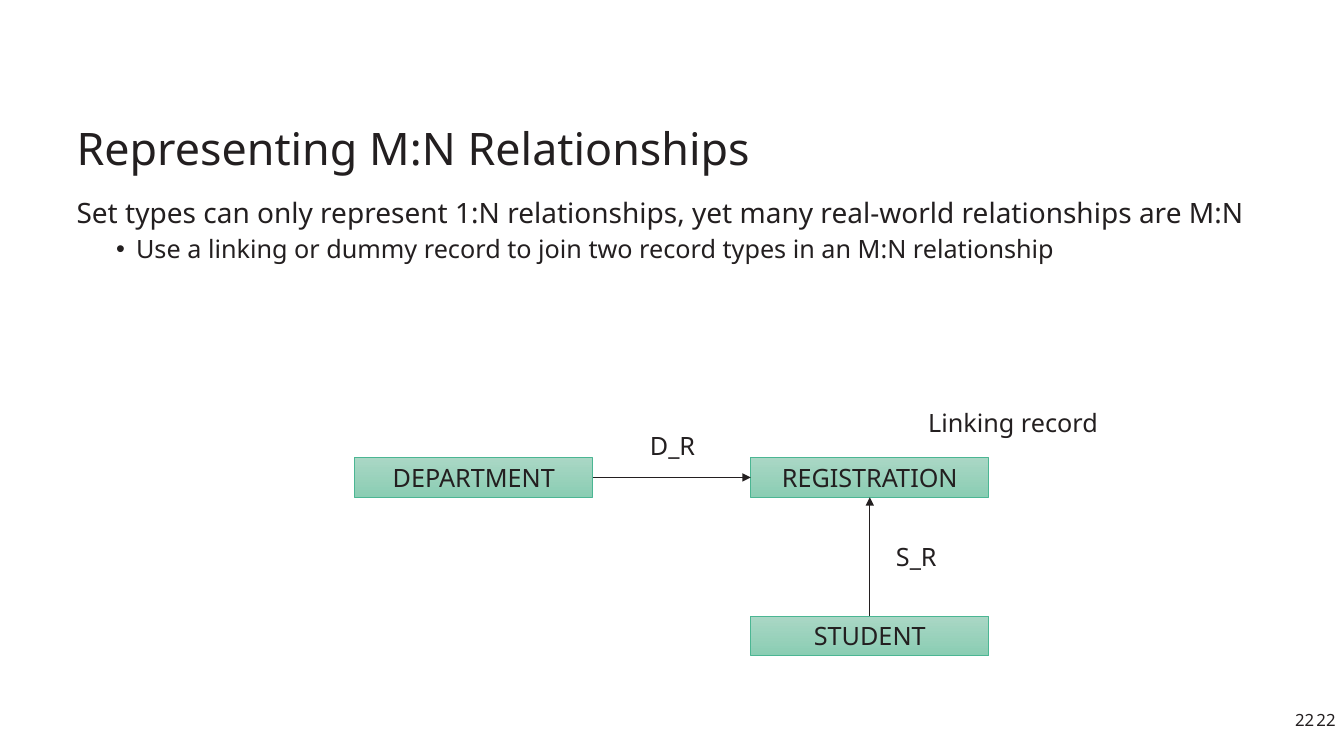
from dataclasses import dataclass

from lxml import etree
from pptx import Presentation
from pptx.dml.color import RGBColor
from pptx.enum.shapes import MSO_CONNECTOR, MSO_SHAPE
from pptx.enum.text import MSO_ANCHOR, MSO_AUTO_SIZE, PP_ALIGN
from pptx.oxml.ns import qn
from pptx.util import Cm, Pt

STRAIGHT = MSO_CONNECTOR.STRAIGHT
RECTANGLE = MSO_SHAPE.RECTANGLE
TOP, MIDDLE, BOTTOM = MSO_ANCHOR.TOP, MSO_ANCHOR.MIDDLE, MSO_ANCHOR.BOTTOM
LEFT, CENTER, RIGHT = PP_ALIGN.LEFT, PP_ALIGN.CENTER, PP_ALIGN.RIGHT
FIT_SHAPE = MSO_AUTO_SIZE.SHAPE_TO_FIT_TEXT


@dataclass(frozen=True)
class Theme:
    font: str = "Noto Sans"
    ink: RGBColor = RGBColor(0x23, 0x1F, 0x20)
    record_top: RGBColor = RGBColor(0xAA, 0xD7, 0xC5)
    record_bottom: RGBColor = RGBColor(0x8A, 0xCD, 0xB3)
    record_border: RGBColor = RGBColor(0x4B, 0xB6, 0x93)
    title_size: int = 32
    body_size: int = 20
    label_size: int = 18
    number_size: int = 12


THEME = Theme()


@dataclass(frozen=True)
class Box:
    """A rectangle in centimetres."""
    left: float
    top: float
    width: float
    height: float

    def lengths(self):
        return Cm(self.left), Cm(self.top), Cm(self.width), Cm(self.height)


def style_paragraph(paragraph, size, alignment=LEFT):
    paragraph.alignment = alignment
    for run in paragraph.runs:
        run.font.name = THEME.font
        run.font.size = Pt(size)
        run.font.color.rgb = THEME.ink


def add_text(slide, box, text, size, alignment=LEFT, anchor=TOP, inset=(0.2, 0.1)):
    shape = slide.shapes.add_textbox(*box.lengths())
    frame = shape.text_frame
    frame.word_wrap = True
    frame.vertical_anchor = anchor
    frame.margin_left = frame.margin_right = Cm(inset[0])
    frame.margin_top = frame.margin_bottom = Cm(inset[1])
    frame.text = text
    for paragraph in frame.paragraphs:
        style_paragraph(paragraph, size, alignment)
    return frame


def add_title(slide, box):
    frame = add_text(slide, box, "Representing M:N Relationships", THEME.title_size, anchor=BOTTOM)
    frame.paragraphs[0].line_spacing = 0.9


def add_body(slide, box):
    frame = add_text(
        slide, box,
        "Set types can only represent 1:N relationships, yet many real-world relationships are M:N",
        THEME.body_size)
    bullet = frame.add_paragraph()
    bullet.text = "Use a linking or dummy record to join two record types in an M:N relationship"
    bullet.level = 1
    properties = bullet._p.get_or_add_pPr()
    properties.set("marL", str(Cm(1.5)))
    properties.set("indent", str(Cm(-0.5)))
    etree.SubElement(properties, qn("a:buFont"), typeface="Arial")
    etree.SubElement(properties, qn("a:buChar"), char="•")
    style_paragraph(bullet, THEME.label_size)
    bullet.space_before = Pt(5)
    for paragraph in frame.paragraphs:
        paragraph.line_spacing = 0.9


def add_record(slide, box, name):
    shape = slide.shapes.add_shape(RECTANGLE, *box.lengths())
    shape.shadow.inherit = False
    shape.fill.gradient()
    shape.fill.gradient_angle = 270
    for stop, color in zip(shape.fill.gradient_stops, (THEME.record_top, THEME.record_bottom)):
        stop.color.rgb = color
    shape.line.color.rgb = THEME.record_border
    shape.line.width = Pt(0.5)
    frame = shape.text_frame
    frame.word_wrap = False
    frame.vertical_anchor = MIDDLE
    frame.text = name
    style_paragraph(frame.paragraphs[0], THEME.label_size, CENTER)
    return shape


def add_arrow(slide, source, source_site, target, target_site):
    """Connect two records; sites count from the top, counterclockwise."""
    connector = slide.shapes.add_connector(STRAIGHT, 0, 0, 0, 0)
    connector.begin_connect(source, source_site)
    connector.end_connect(target, target_site)
    connector.line.color.rgb = THEME.ink
    connector.line.width = Pt(0.75)
    etree.SubElement(connector.line._get_or_add_ln(), qn("a:tailEnd"), type="triangle")
    etree.SubElement(connector._element.spPr, qn("a:effectLst"))


def add_label(slide, box, text):
    frame = add_text(slide, box, text, THEME.label_size, inset=(0.25, 0.13))
    frame.word_wrap = False
    frame.auto_size = FIT_SHAPE


def add_diagram(slide, box):
    width, height = 6, 1
    right = box.left + box.width - width
    bottom = box.top + box.height - height
    department = add_record(slide, Box(box.left, box.top, width, height), "DEPARTMENT")
    registration = add_record(slide, Box(right, box.top, width, height), "REGISTRATION")
    student = add_record(slide, Box(right, bottom, width, height), "STUDENT")
    add_arrow(slide, department, 3, registration, 1)
    add_arrow(slide, student, 0, registration, 2)
    add_label(slide, Box(right + 4.22, box.top - 1.4, 5, 1.02), "Linking record")
    add_label(slide, Box(box.left + 7.19, box.top - 0.81, 1.73, 1.02), "D_R")
    add_label(slide, Box(right + 3.41, box.top + 1.98, 1.57, 1.02), "S_R")


def add_page_numbers(slide, box):
    width = 1.19
    for left in (box.left, box.left + box.width - width):
        add_text(slide, Box(left, box.top, width, box.height), "22",
                 THEME.number_size, RIGHT, inset=(0.2, 0.15))


def main():
    presentation = Presentation()
    presentation.slide_width = Cm(33.87)
    presentation.slide_height = Cm(19.05)
    slide = presentation.slides.add_slide(presentation.slide_layouts[6])
    add_title(slide, Box(1.73, 1.93, 30.4, 2.59))
    add_body(slide, Box(1.73, 4.93, 30.4, 3.99))
    add_diagram(slide, Box(8.94, 11.53, 15.98, 4.99))
    add_page_numbers(slide, Box(32.13, 17.73, 1.73, 0.79))
    presentation.save("out.pptx")


if __name__ == "__main__":
    main()
